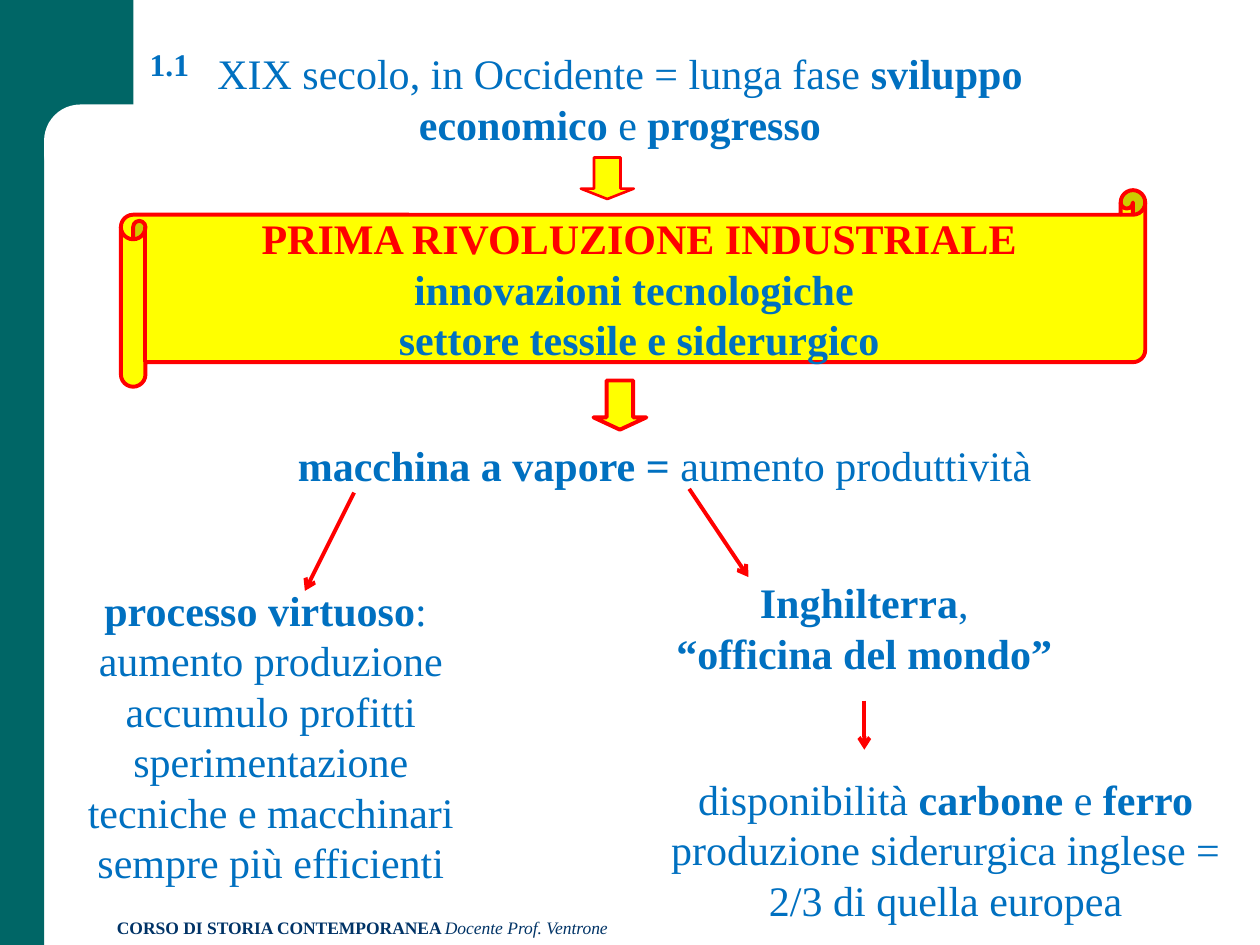
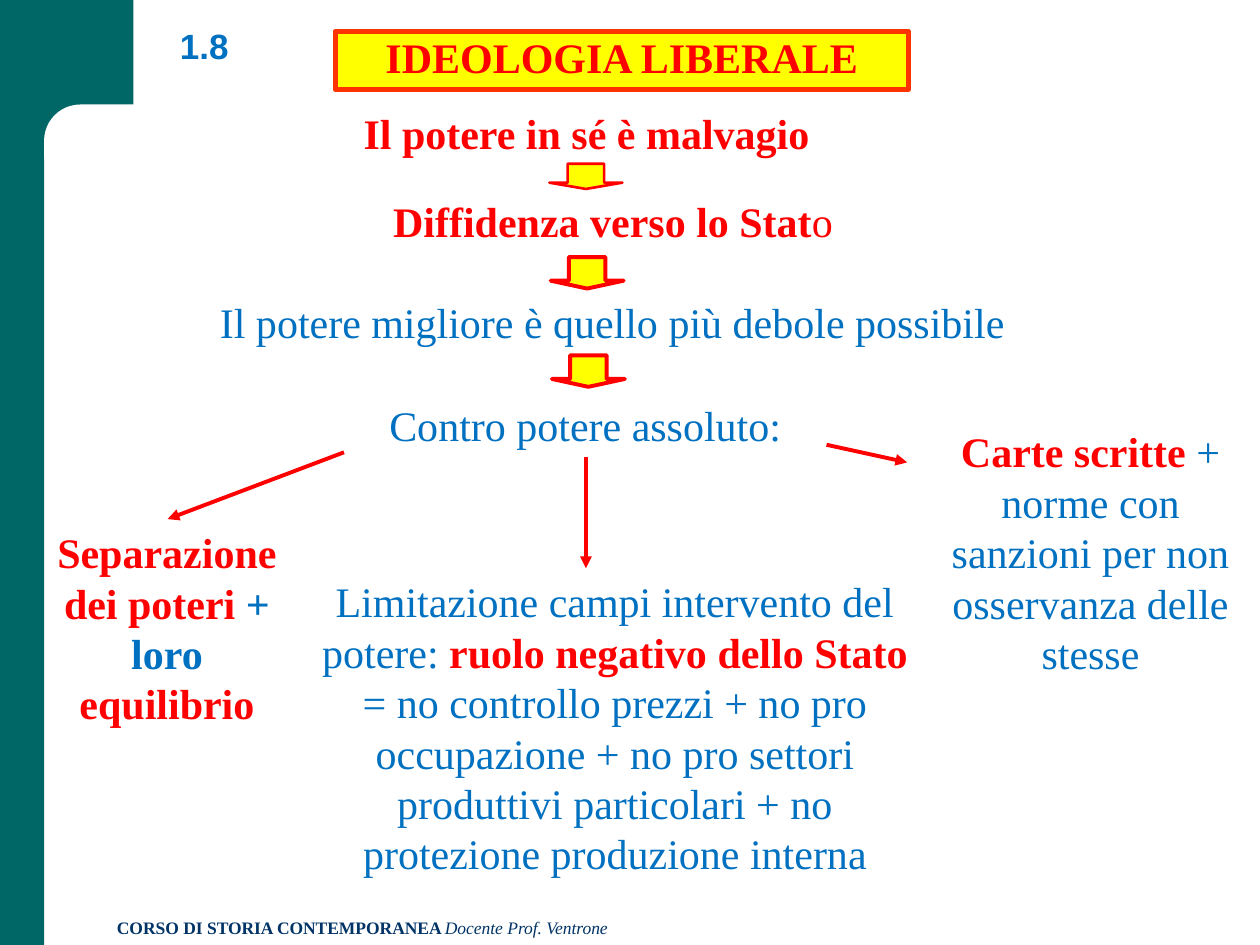
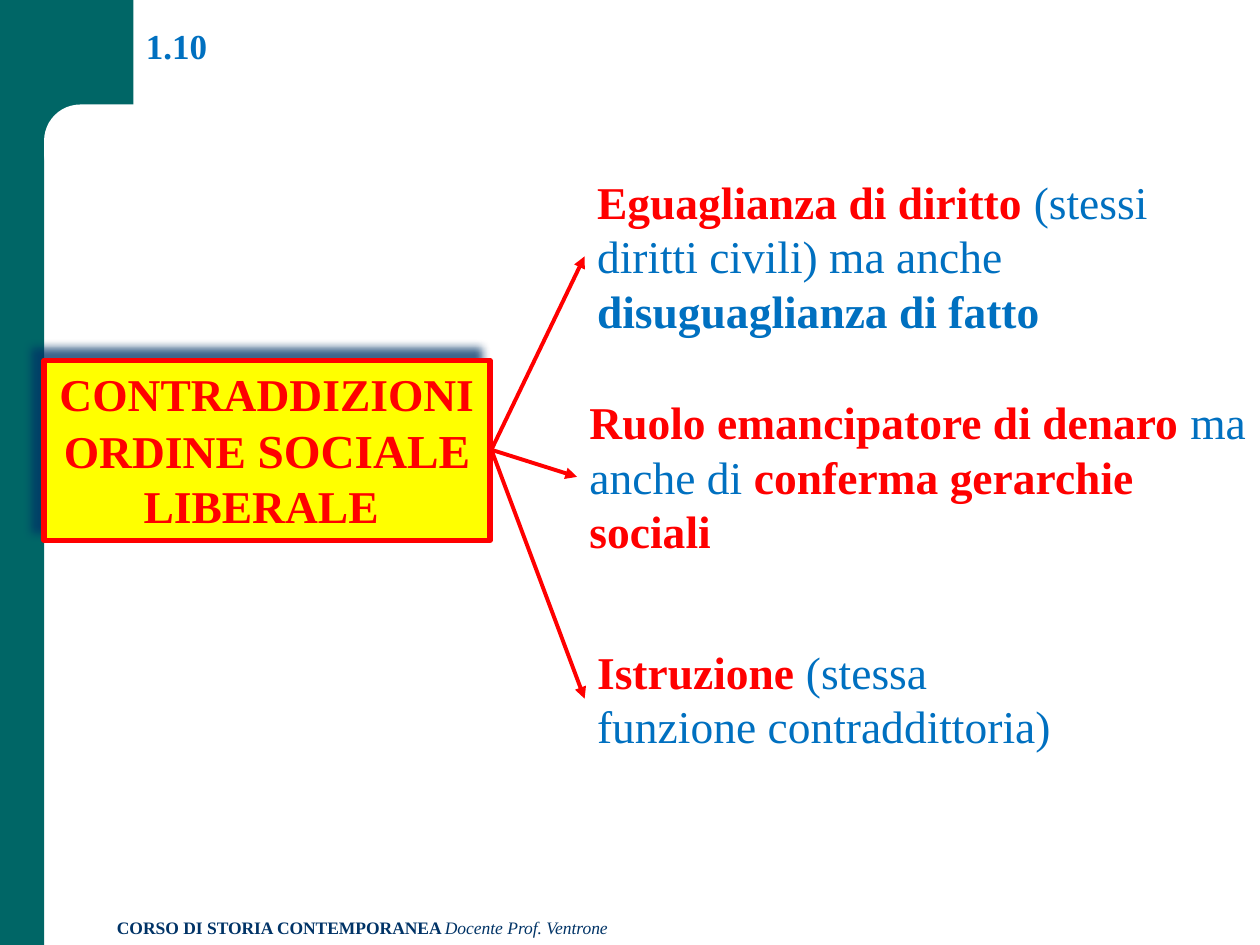
from collections import namedtuple

from lxml import etree
from pptx import Presentation
from pptx import util as u
from pptx.dml.color import RGBColor
from pptx.enum import shapes, text
from pptx.oxml.ns import qn

CELL = u.Inches(0.1)
COLUMNS, ROWS = 100, 75
TEAL, NAVY, WHITE = "006666", "003366", "FFFFFF"
BLUE, RED, ORANGE, YELLOW = "0070C0", "FF0000", "FF3300", "FFFF00"
SERIF, SANS = "Times New Roman", "Arial"
LEFT, CENTER = text.PP_ALIGN.LEFT, text.PP_ALIGN.CENTER
TOP, MIDDLE, BOTTOM = text.MSO_ANCHOR.TOP, text.MSO_ANCHOR.MIDDLE, text.MSO_ANCHOR.BOTTOM
PRESET = shapes.MSO_SHAPE

Words = namedtuple("Words", "content hue bold italic size", defaults=(BLUE, False, False, None))


def strong(content, hue=BLUE, size=None):
    """Return bold words."""
    return Words(content, hue, True, False, size)


def colour(code):
    """Turn a hex string into a colour."""
    return RGBColor.from_string(code)


def cells(*counts):
    """Turn counts of grid cells into lengths."""
    return [round(count * CELL) for count in counts]


def write(frame, paragraphs, size=24, align=CENTER, anchor=TOP, wrap=True, face=SERIF, spacing=None):
    """Fill a text frame with paragraphs made of words."""
    frame.word_wrap = wrap
    frame.vertical_anchor = anchor
    for index, pieces in enumerate(paragraphs):
        paragraph = frame.add_paragraph() if index else frame.paragraphs[0]
        paragraph.alignment = align
        paragraph.line_spacing = spacing
        for piece in pieces:
            run = paragraph.add_run()
            run.text = piece.content
            run.font.name = face
            run.font.size = u.Pt(piece.size or size)
            run.font.bold = piece.bold
            run.font.italic = piece.italic
            run.font.color.rgb = colour(piece.hue)


def add_note(slide, area, *paragraphs, **style):
    """Place free text in an area of the grid."""
    write(slide.shapes.add_textbox(*cells(*area)).text_frame, paragraphs, **style)


def add_panel(slide, preset, area, fill, edge=None, weight=2.25):
    """Place a filled preset shape, with an outline if an edge colour is given."""
    panel = slide.shapes.add_shape(preset, *cells(*area))
    panel.shadow.inherit = False
    panel.fill.solid()
    panel.fill.fore_color.rgb = colour(fill)
    if edge:
        panel.line.color.rgb = colour(edge)
        panel.line.width = u.Pt(weight)
    else:
        panel.line.fill.background()
    return panel


def add_step(slide, area, weight=2.25):
    """Place a yellow block arrow pointing down."""
    step = add_panel(slide, PRESET.DOWN_ARROW, area, YELLOW, RED, weight)
    step.adjustments[1] = 0.25


def add_arrow(slide, start, end, head="triangle"):
    """Draw a thin red arrow between two grid points."""
    arrow = slide.shapes.add_connector(shapes.MSO_CONNECTOR.STRAIGHT, *cells(*start, *end))
    arrow.line.color.rgb = colour(RED)
    arrow.line.width = u.Pt(2.25)
    properties = arrow._element.spPr
    etree.SubElement(properties.find(qn("a:ln")), qn("a:tailEnd"), type=head)
    etree.SubElement(properties, qn("a:effectLst"))


def cast_shadow(panel):
    """Give a panel a soft navy shadow towards the upper left."""
    effects = panel._element.spPr.find(qn("a:effectLst"))
    shadow = etree.SubElement(effects, qn("a:outerShdw"), blurRad=str(u.Pt(5)),
                              dist=str(u.Pt(8.5)), dir="13500000", algn="ctr", rotWithShape="0")
    tint = etree.SubElement(shadow, qn("a:srgbClr"), val=NAVY)
    etree.SubElement(tint, qn("a:alpha"), val="75000")


def start_slide(deck):
    """Add a blank slide with the teal frame and the course footer."""
    slide = deck.slides.add_slide(deck.slide_layouts[6])
    add_panel(slide, PRESET.RECTANGLE, (0, 0, 3.5, ROWS), TEAL)
    add_panel(slide, PRESET.RECTANGLE, (0, 0, 10.6, 11.7), TEAL)
    corner = add_panel(slide, PRESET.ROUNDED_RECTANGLE, (3.5, 8.3, 60.6, 6.7), WHITE)
    corner.adjustments[0] = 0.43
    course = strong("CORSO DI STORIA CONTEMPORANEA ", NAVY)
    teacher = Words("Docente Prof. Ventrone", NAVY, italic=True)
    add_note(slide, (8.3, 72.3, 61.7, 2.7), [course, teacher], size=10, align=LEFT)
    return slide


def add_number(slide, area, number, size=20, **style):
    """Write the section number at the top left."""
    add_note(slide, area, [strong(number)], size=size, align=LEFT, **style)


def build_revolution(deck):
    """Build the slide on the first industrial revolution."""
    slide = start_slide(deck)
    scroll = add_panel(slide, PRESET.HORIZONTAL_SCROLL, (9.6, 15.1, 81.3, 15.6), YELLOW, RED)
    write(scroll.text_frame, [[strong("PRIMA RIVOLUZIONE INDUSTRIALE", RED)],
                              [strong("innovazioni tecnologiche ")],
                              [strong("settore tessile e siderurgico")]], anchor=MIDDLE, wrap=False)
    add_note(slide, (15.6, 3.3, 67.2, 9.1),
             [Words("XIX secolo, in Occidente = lunga fase "), strong("sviluppo economico "),
              Words("e "), strong("progresso")])
    add_step(slide, (46.1, 12.5, 4.2, 3.3), 1.5)
    add_step(slide, (47.1, 30.2, 4.2, 3.9))
    add_note(slide, (14.1, 34.4, 77.3, 5),
             [strong("macchina a vapore = "), Words("aumento produttività")])
    add_note(slide, (4.3, 45.9, 34.4, 25.2),
             [strong("processo virtuoso"), Words(": ")],
             [Words("aumento produzione accumulo profitti sperimentazione "
                    "tecniche e macchinari sempre più efficienti")])
    add_note(slide, (52.6, 45.3, 32, 9.1),
             [strong("Inghilterra"), Words(",")], [strong("“officina del mondo”")])
    add_note(slide, (52, 60.9, 46.1, 13.1),
             [Words("disponibilità "), strong("carbone"), Words(" e "), strong("ferro")],
             [Words("produzione siderurgica inglese = 2/3 di quella europea")])
    for start, end in (((28.1, 39.1), (24.2, 46.9)),
                       ((54.7, 38.8), (59.4, 45.8)),
                       ((68.6, 55.6), (68.6, 59.5))):
        add_arrow(slide, start, end, "arrow")
    add_number(slide, (10.9, 3.1, 6.3, 4), "1.1", 18)


def build_ideology(deck):
    """Build the slide on liberal ideology."""
    slide = start_slide(deck)
    add_number(slide, (13.3, 0, 6.7, 5.8), "1.8", face=SANS, anchor=BOTTOM, spacing=0.9)
    heading = add_panel(slide, PRESET.RECTANGLE, (26.6, 2.5, 45.5, 4.6), YELLOW, ORANGE, 3)
    write(heading.text_frame, [[strong("IDEOLOGIA LIBERALE", RED)]], spacing=0.9)
    chain = (
        ((19.9, 8, 53.3, 5), [strong("Il potere in sé è malvagio", RED)]),
        ((30.2, 15, 36.9, 5), [strong("Diffidenza verso lo Stat", RED), Words("o", RED)]),
        ((15, 23, 67.2, 5), [Words("Il potere migliore è quello più debole possibile")]),
        ((29.3, 31.2, 34.3, 5), [Words("Contro potere assoluto:")]),
    )
    for area, sentence in chain:
        add_note(slide, area, sentence, anchor=MIDDLE, wrap=False)
    add_step(slide, (43.6, 13, 5.8, 2), 1.5)
    add_step(slide, (43.7, 20.4, 5.8, 2.5))
    add_step(slide, (43.8, 28.2, 5.8, 2.5))
    limits = (
        ((3.3, 41.2, 19.9, 17.2), (27.3, 35.9), (13.3, 41.2),
         [strong("Separazione dei poteri ", RED), strong("+ loro "), strong("equilibrio", RED)]),
        ((24.4, 45.1, 48.8, 25.2), (46.5, 36.3), (46.5, 45.1),
         [Words("Limitazione campi intervento del potere: "),
          strong("ruolo negativo dello Stato ", RED),
          Words("= no controllo prezzi + no pro occupazione + no pro settori "
                "produttivi particolari + no protezione produzione interna")]),
        ((73.3, 33.2, 26.5, 21.2), (65.6, 35.3), (72, 36.7),
         [strong("Carte scritte ", RED),
          Words("+ norme con sanzioni per non osservanza delle stesse")]),
    )
    for area, start, end, sentence in limits:
        add_note(slide, area, sentence, anchor=MIDDLE)
        add_arrow(slide, start, end)


def build_contradictions(deck):
    """Build the slide on the contradictions of the liberal order."""
    slide = start_slide(deck)
    add_number(slide, (10.6, 0, 8.7, 5.8), "1.10", anchor=BOTTOM, spacing=0.9)
    theme = add_panel(slide, PRESET.RECTANGLE, (3.5, 28.6, 35.4, 14.3), YELLOW, RED, 3)
    cast_shadow(theme)
    write(theme.text_frame, [[strong("CONTRADDIZIONI ORDINE ", RED), strong("SOCIALE", RED, 27),
                              strong(" LIBERALE ", RED)]], size=26)
    claims = (
        ((46.4, 13.3, 53.6, 14.1),
         [strong("Eguaglianza di diritto ", RED), Words("(stessi diritti civili) ma anche "),
          strong("disuguaglianza di fatto")]),
        ((45.8, 30.8, 54.2, 14.1),
         [strong("Ruolo emancipatore di denaro ", RED), Words("ma anche di "),
          strong("conferma gerarchie sociali", RED)]),
        ((46.4, 50.6, 40.2, 9.7),
         [strong("Istruzione", RED), Words(" (stessa funzione contraddittoria)")]),
    )
    for area, sentence in claims:
        left, top, _, height = area
        add_note(slide, area, sentence, size=26, align=LEFT)
        add_arrow(slide, (39, 35.7), (left, top + height / 2))


def main():
    """Build and save the lesson."""
    deck = Presentation()
    deck.slide_width, deck.slide_height = cells(COLUMNS, ROWS)
    build_revolution(deck)
    build_ideology(deck)
    build_contradictions(deck)
    deck.save("out.pptx")


if __name__ == "__main__":
    main()
